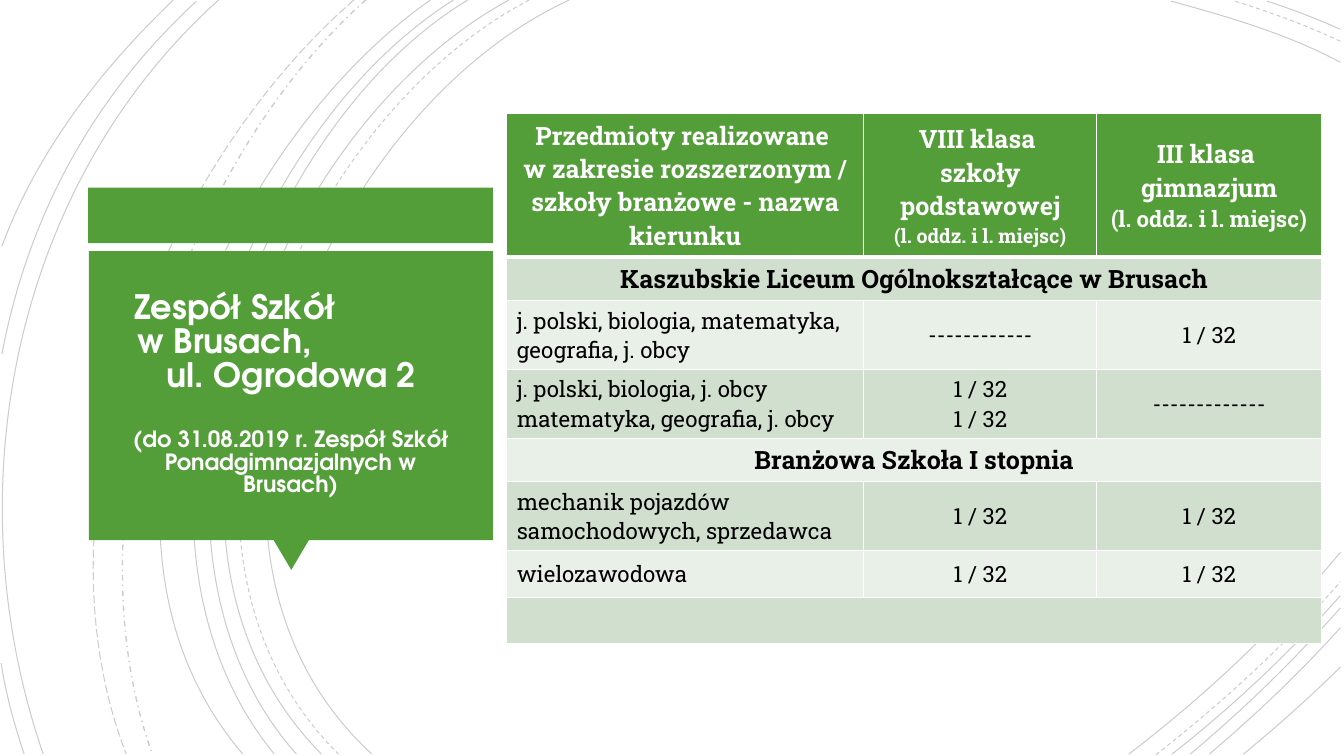
from lxml import etree
from pptx import Presentation, util as u
from pptx.dml.color import RGBColor
from pptx.enum import shapes, text
from pptx.oxml import ns

COLOURS = {"green": "549E39", "pale": "D1DFCE", "light": "E9F0E8",
           "white": "FFFFFF", "black": "000000"}
BODY = "Roboto Slab"
TITLE = "TeX Gyre Adventor"
CENTER = text.PP_ALIGN.CENTER
LEFT = text.PP_ALIGN.LEFT
MIDDLE = text.MSO_ANCHOR.MIDDLE
BOTTOM = 19

LONG_ARCS = [
    (14.35, (8, 2.92), (3.63, 13.72), 9.37, "solid"),
    (13.34, (7.24, 3.18), (3.12, 13.64), 8.53, "dash"),
    (12.83, (6.86, 3.23), (2.79, 13.64), 8.1, "solid"),
    (11.79, (6.2, 3.38), (2.79, 13.74), 7.47, "solid"),
    (11.43, (5.87, 3.51), (2.46, 13.54), 6.91, "solid"),
    (10.85, (5.51, 3.73), (1.35, 13.44), 6.12, "solid"),
    (9.22, (4.47, 4.22), (1.65, 12.93), 3.84, "dashDot"),
    (8.92, (3.99, 4.29), (0.74, 12.67), 3.18, "lgDash"),
    (5.51, (0.28, 4.7), (-1.17, 12.45), 1.09, "solid"),
]
CORNER_ARCS = [
    ((33.78, 1.57), (32.46, 0.86), (30.91, 0.41), (29.51, 0.03), "solid"),
    ((33.78, 1.04), (32.92, 0.64), (32, 0.3), (31.12, 0.03), "dash"),
    ((33.78, 0.74), (33.2, 0.48), (32.56, 0.23), (31.93, 0.03), "solid"),
    ((28.45, 19), (30.38, 17.53), (32.21, 15.8), (33.78, 13.92), "solid"),
    ((29.13, 19.02), (30.78, 17.73), (32.39, 16.26), (33.78, 14.66), "dash"),
    ((29.54, 19), (31.06, 17.81), (32.49, 16.46), (33.78, 15.01), "solid"),
    ((30, 19), (31.34, 17.88), (32.61, 16.64), (33.78, 15.32), "solid"),
    ((30.48, 19), (31.65, 18.01), (32.77, 16.94), (33.78, 15.82), "solid"),
    ((31.34, 19), (32.18, 18.31), (33, 17.58), (33.78, 16.81), "solid"),
    ((4.95, 0.03), (2.34, 2.44), (0.71, 5.44), (0.05, 8.92), "solid"),
    ((0.03, 16.71), (0.15, 17.5), (0.36, 18.26), (0.61, 19), "solid"),
    ((4.37, 0), (2.54, 1.75), (0.94, 3.81), (0.05, 6.2), "solid"),
]

COLUMN_WIDTHS = [9, 5.87, 5.66]
ROW_HEIGHTS = [3.3, 1.02, 1.6, 1.6, 1.02, 1.6, 1.17, 1.17]
HEADERS = [
    (["Przedmioty realizowane ", "w zakresie rozszerzonym /",
      "szkoły branżowe - nazwa kierunku"], None, 18),
    (["VIII klasa ", "szkoły podstawowej"], "(l. oddz. i l. miejsc)", 14),
    (["III klasa ", "gimnazjum"], "(l. oddz. i l. miejsc)", 16),
]
ROWS = [
    ["Kaszubskie Liceum Ogólnokształcące w Brusach"],
    ["j. polski, biologia, matematyka, geografia, j. obcy", "------------", "1 / 32"],
    ["j. polski, biologia, j. obcy\nmatematyka, geografia, j. obcy",
     "1 / 32\n1 / 32", "-------------"],
    ["Branżowa Szkoła I stopnia"],
    ["mechanik pojazdów samochodowych, sprzedawca", "1 / 32", "1 / 32"],
    ["wielozawodowa", "1 / 32", "1 / 32"],
    [""],
]


def rgb(name):
    return RGBColor.from_string(COLOURS[name])


def write(frame, words, first=False, size=16, colour="black", bold=False,
          font=BODY, align=CENTER, indent=0, before=0, spacing=None):
    para = frame.paragraphs[0] if first else frame.add_paragraph()
    para.alignment = align
    if before:
        para.space_before = u.Pt(before)
    if spacing:
        para.line_spacing = spacing
    if indent:
        para._p.get_or_add_pPr().set("marL", str(u.Cm(indent)))
    span = para.add_run()
    span.text = words
    span.font.name = font
    span.font.size = u.Pt(size)
    span.font.bold = bold
    span.font.color.rgb = rgb(colour)


def add_curve(page, start, pull, push, end, dash):
    points = [(u.Cm(x), u.Cm(y)) for x, y in (start, pull, push, end)]
    builder = page.shapes.build_freeform(*points[0])
    builder.add_line_segments(points[1:], close=False)
    curve = builder.convert_to_shape()
    segments = list(curve._element.iter(ns.qn("a:lnTo")))
    bezier = etree.SubElement(segments[0].getparent(), ns.qn("a:cubicBezTo"))
    for segment in segments:
        bezier.append(segment[0])
        segment.getparent().remove(segment)
    curve.shadow.inherit = False
    curve.fill.background()
    curve.line.color.rgb = rgb("black")
    curve.line.width = u.Pt(1 if dash == "dashDot" else 0.75)
    line = curve.line._get_or_add_ln()
    colour = line.find(".//" + ns.qn("a:srgbClr"))
    etree.SubElement(colour, ns.qn("a:alpha")).set("val", "20000")
    etree.SubElement(line, ns.qn("a:prstDash")).set("val", dash)


def add_block(page, kind, left, top, width, height, rotation=0):
    block = page.shapes.add_shape(kind, u.Cm(left), u.Cm(top), u.Cm(width), u.Cm(height))
    block.shadow.inherit = False
    block.rotation = rotation
    block.fill.solid()
    block.fill.fore_color.rgb = rgb("green")
    block.line.fill.background()


def add_title(page):
    box = page.shapes.add_textbox(u.Cm(2.46), u.Cm(6.53), u.Cm(9.73), u.Cm(6.83))
    frame = box.text_frame
    frame.word_wrap = True
    frame.vertical_anchor = MIDDLE
    frame.margin_left = frame.margin_right = u.Cm(0.64)
    frame.margin_top = frame.margin_bottom = u.Cm(0.64)
    look = {"colour": "white", "bold": True, "font": TITLE, "spacing": 0.85}
    lines = [("Zespół Szkół", 0.28), ("w Brusach,", 0.36), ("ul. Ogrodowa 2", 1.1)]
    for number, (words, indent) in enumerate(lines):
        write(frame, words, first=number == 0, size=24, align=LEFT, indent=indent, **look)
    write(frame, "(do 31.08.2019 r. Zespół Szkół Ponadgimnazjalnych w Brusach)",
          before=24.5, **look)


def style_cell(cell, fill, bottom=1, top=1):
    cell.vertical_anchor = MIDDLE
    cell.fill.solid()
    cell.fill.fore_color.rgb = rgb(fill)
    properties = cell._tc.get_or_add_tcPr()
    sides = {"lnL": 1, "lnR": 1, "lnT": top, "lnB": bottom}
    for place, (side, width) in enumerate(sides.items()):
        line = etree.Element(ns.qn("a:" + side), w=str(u.Pt(width)))
        solid = etree.SubElement(line, ns.qn("a:solidFill"))
        etree.SubElement(solid, ns.qn("a:srgbClr")).set("val", COLOURS["white"])
        properties.insert(place, line)


def add_subjects_table(page):
    table = page.shapes.add_table(
        len(ROW_HEIGHTS), len(COLUMN_WIDTHS), u.Cm(12.77), u.Cm(2.87),
        u.Cm(sum(COLUMN_WIDTHS)), u.Cm(sum(ROW_HEIGHTS))).table
    for column, width in zip(table.columns, COLUMN_WIDTHS):
        column.width = u.Cm(width)
    for row, height in zip(table.rows, ROW_HEIGHTS):
        row.height = u.Cm(height)
    for column, (lines, note, note_size) in enumerate(HEADERS):
        cell = table.cell(0, column)
        style_cell(cell, "green", bottom=3)
        for number, words in enumerate(lines):
            write(cell.text_frame, words, first=number == 0, size=18,
                  colour="white", bold=True)
        if note:
            write(cell.text_frame, note, size=note_size, colour="white", bold=True)
    for row, entries in enumerate(ROWS, 1):
        heading = len(entries) == 1
        for column in range(len(COLUMN_WIDTHS)):
            style_cell(table.cell(row, column), "pale" if row % 2 else "light",
                       top=3 if row == 1 else 1)
        if heading:
            table.cell(row, 0).merge(table.cell(row, len(COLUMN_WIDTHS) - 1))
        for column, entry in enumerate(entries):
            if not entry:
                continue
            for number, words in enumerate(entry.split("\n")):
                write(table.cell(row, column).text_frame, words, first=number == 0,
                      size=18 if heading else 16, bold=heading,
                      align=CENTER if heading or column else LEFT)


def main():
    deck = Presentation()
    deck.slide_width, deck.slide_height = u.Cm(33.87), u.Cm(19.05)
    page = deck.slides.add_slide(deck.slide_layouts[6])
    for start, pull, push, end, dash in LONG_ARCS:
        add_curve(page, (start, 0), pull, push, (end, BOTTOM), dash)
    for arc in CORNER_ARCS:
        add_curve(page, *arc)
    add_block(page, shapes.MSO_SHAPE.RECTANGLE, 2.22, 4.73, 10.2, 1.4)
    add_block(page, shapes.MSO_SHAPE.ISOSCELES_TRIANGLE, 6.89, 13.6, 0.9, 0.76, 180)
    add_block(page, shapes.MSO_SHAPE.RECTANGLE, 2.24, 6.33, 10.18, 7.28)
    add_subjects_table(page)
    add_title(page)
    deck.save("out.pptx")


if __name__ == "__main__":
    main()
